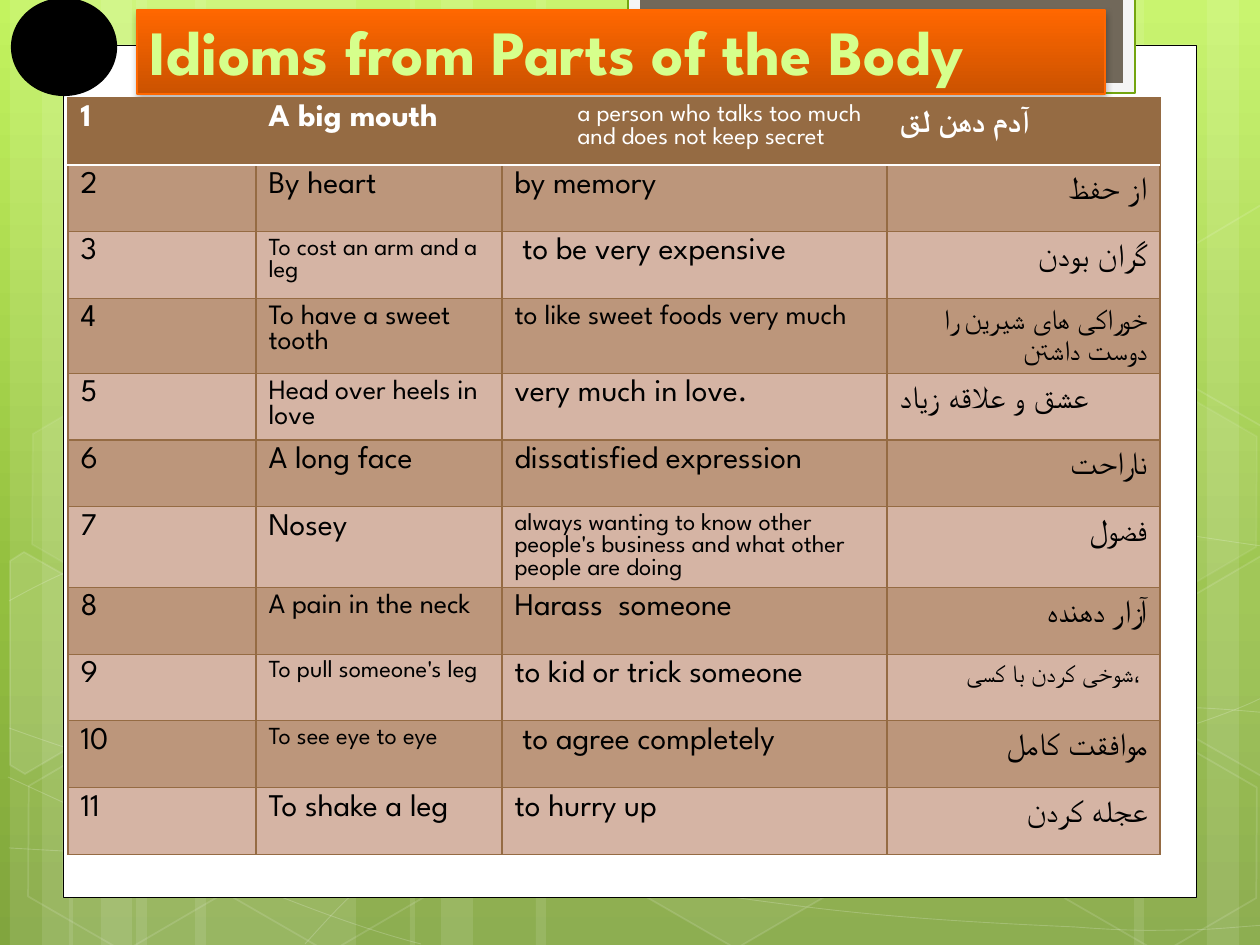
from dataclasses import dataclass

import pptx
import pptx.dml.color
import pptx.enum.shapes
import pptx.enum.text
import pptx.oxml
import pptx.oxml.ns
import pptx.util

PX = 914400 / 126  # EMU in one px
KIND = pptx.enum.shapes.MSO_SHAPE
ALIGN = pptx.enum.text.PP_ALIGN


@dataclass(frozen=True)
class Theme:
    font: str = "League Spartan"
    arabic: str = "Arial"
    white: str = "FFFFFF"
    black: str = "000000"
    brown: str = "956B43"
    bands: tuple = ("D5B4A4", "BC967B")
    title_text: str = "D6FF8C"
    title_line: str = "FF6700"
    title_fill: tuple = ((0, "FF6700"), (100, "CB5200"))
    backdrop: tuple = ((0, "C3F35F"), (62, "93BF3F"), (100, "81A53E"))
    frame: str = "F5F5F5"
    frame_line: str = "74A510"
    frame_inner: str = "71685A"
    title: int = 36
    normal: int = 18
    medium: int = 16
    small: int = 14


T = Theme()


@dataclass(frozen=True)
class Paint:
    fill: str | None = None
    line: str | None = None
    width: float = 1
    fill_alpha: int = 100
    line_alpha: int = 100


@dataclass(frozen=True)
class Cell:
    text: str
    size: int = T.normal
    align: ALIGN = ALIGN.LEFT
    font: str = T.font
    bold: bool = False
    indent: int = 0


def emu(px: float) -> int:
    return round(px * PX)


def rgb(code: str):
    return pptx.dml.color.RGBColor.from_string(code)


def xml(tag: str, attrs: str = "", inner: str = ""):
    ns = pptx.oxml.ns.nsdecls("a")
    return pptx.oxml.parse_xml(f"<a:{tag} {ns} {attrs}>{inner}</a:{tag}>")


def apply(shape, paint: Paint) -> None:
    """Give a shape its fill and line, without a shadow."""
    shape.shadow.inherit = False
    parts = ((shape.fill, paint.fill, paint.fill_alpha, "a:solidFill"),
             (shape.line.fill, paint.line, paint.line_alpha, "a:ln/a:solidFill"))
    for fill, code, alpha, where in parts:
        if code is None:
            fill.background()
            continue
        fill.solid()
        fill.fore_color.rgb = rgb(code)
        if alpha < 100:
            color = shape.element.spPr.xpath(where + "/a:srgbClr")[0]
            color.append(xml("alpha", f'val="{alpha * 1000}"'))
    if paint.line:
        shape.line.width = pptx.util.Pt(paint.width)


def gradient(fill, root, stops: tuple) -> None:
    """Vertical gradient through any number of stops."""
    fill.gradient()
    fill.gradient_angle = 270
    gs_list = root.xpath(".//a:gsLst")[0]
    for old in list(gs_list):
        gs_list.remove(old)
    for position, code in stops:
        gs_list.append(xml("gs", f'pos="{position * 1000}"', f'<a:srgbClr val="{code}"/>'))


def preset(s, kind, x: int, y: int, w: int, h: int, paint: Paint):
    sp = s.shapes.add_shape(kind, emu(x), emu(y), emu(w), emu(h))
    apply(sp, paint)
    return sp


def outline(s, points: list, paint: Paint, close: bool):
    builder = s.shapes.build_freeform(*points[0], scale=PX)
    builder.add_line_segments(points[1:], close=close)
    sp = builder.convert_to_shape()
    apply(sp, paint)
    return sp


def curve(s, start: tuple, bends: list, paint: Paint) -> None:
    """Chain of cubic curves: every three points become one bend."""
    points = [start] + [bend[i:i + 2] for bend in bends for i in (0, 2, 4)]
    trace = outline(s, points, paint, False).element.xpath(".//a:path")[0]
    segments = trace.xpath("a:lnTo")
    for i in range(0, len(segments), 3):
        cubic = xml("cubicBezTo")
        for segment in segments[i:i + 3]:
            cubic.append(segment[0])
            trace.remove(segment)
        trace.append(cubic)


def glass(fill_alpha: int, line_alpha: int) -> Paint:
    return Paint(T.white if fill_alpha else None, T.white, 1, fill_alpha, line_alpha)


STRIPES = [(136, 220), (10, 63), (42, 105), (195, 220), (69, 63), (101, 105),
           (924, 220), (1207, 63), (1134, 105), (536, 388), (410, 63), (441, 105)]
CURVES = [
    ((9, 848), [(77, 852, 145, 856, 239, 854), (334, 853, 451, 851, 577, 838),
                (703, 825, 882, 801, 998, 777), (1113, 753, 1231, 716, 1269, 694)]),
    ((9, 601), [(45, 581, 82, 562, 152, 543), (224, 524, 326, 496, 437, 488),
                (549, 479, 685, 478, 824, 488), (963, 498, 1193, 537, 1269, 547)]),
    ((8, 777), [(160, 847, 311, 916, 421, 944)]),
    ((9, 728), [(48, 742, 88, 756, 161, 776), (234, 795, 344, 827, 450, 848),
                (554, 869, 687, 892, 791, 905), (896, 919, 1008, 924, 1075, 927),
                (1140, 932, 1158, 930, 1191, 930), (1223, 929, 1246, 926, 1269, 925)]),
    ((305, 944), [(328, 919, 350, 893, 381, 871), (411, 848, 454, 823, 489, 805),
                  (524, 788, 546, 780, 592, 767), (638, 754, 722, 737, 766, 728),
                  (811, 719, 818, 719, 857, 717), (896, 713, 958, 709, 1000, 708),
                  (1045, 707, 1116, 708, 1201, 708), (1223, 709, 1245, 711, 1268, 713)]),
]
# Left, top, fill opacity, line opacity
HEXAGONS = [(421, 45, 4, 8), (626, 742, 6, 12), (14, 745, 0, 12), (18, 393, 7, 8),
            (219, 746, 0, 12), (949, 571, 10, 12), (1051, 747, 0, 12), (1051, 396, 7, 8)]
CUT_HEXAGONS = [
    ([(10, 561), (24, 552), (121, 607), (120, 718), (25, 774), (10, 765)], 10),
    ([(1167, 611), (1261, 556), (1271, 562), (1271, 772), (1263, 777), (1167, 722)], 4),
    ([(1167, 261), (1261, 205), (1273, 212), (1271, 422), (1263, 427), (1167, 372)], 0),
]


def small(text: str) -> Cell:
    return Cell(text, T.small)


def medium(text: str) -> Cell:
    return Cell(text, T.medium)


def right(text: str, size: int = T.normal, font: str = T.font) -> Cell:
    return Cell(text, size, ALIGN.RIGHT, font)


# Idiom, meaning, Persian equivalent; the number is counted
IDIOMS = [
    (Cell("A big mouth", bold=True),
     Cell("a person who talks too much and does not keep secret", T.small, indent=63),
     Cell("آدم دهن لق", bold=True)),
    (Cell("By heart"), Cell("by memory"), right("از حفظ")),
    (small("To cost an arm and a leg"), Cell(" to be very expensive"), right("گران بودن")),
    (medium("To have a sweet tooth"), medium("to like sweet foods very much"),
     right("خوراکی های شیرین را دوست داشتن", T.medium, T.arabic)),
    (medium("Head over heels in love"), Cell("very much in love."), Cell("عشق و علاقه زیاد")),
    (Cell("A long face"), Cell("dissatisfied expression"), right("ناراحت")),
    (Cell("Nosey"),
     small("always wanting to know other people's business and what other people are doing"),
     right("فضول")),
    (medium("A pain in the neck"), Cell("Harass  someone"), right("آزار دهنده")),
    (small("To pull someone's leg"), Cell("to kid or trick someone"),
     right("شوخی کردن با کسی، ", T.small)),
    (small("To see eye to eye"), Cell(" to agree completely"), right("موافقت کامل")),
    (Cell("To shake a leg"), Cell("to hurry up"), right("عجله کردن")),
]
COLUMNS, TABLE_HEIGHT = (188, 246, 385, 273), 735


def write(p, cell: Cell, color: str) -> None:
    p.text, p.alignment = cell.text, cell.align
    if cell.indent:
        p.level = 1
        p._p.get_or_add_pPr().set("marL", str(emu(cell.indent)))
    f = p.font
    f.name, f.size, f.bold = cell.font, pptx.util.Pt(cell.size), cell.bold
    f.color.rgb = rgb(color)
    latin = p._p.xpath("a:pPr/a:defRPr/a:latin")[0]
    latin.addnext(xml("cs", f'typeface="{T.arabic}"'))


def borders(cell, row: int) -> None:
    """Brown grid, with a white rule under the first row."""
    tc_pr = cell._tc.get_or_add_tcPr()
    for i, side in enumerate(("lnL", "lnR", "lnT", "lnB")):
        rule = (row, side) in ((0, "lnB"), (1, "lnT"))
        code, width = (T.white, 1.25) if rule else (T.brown, 0.75)
        tc_pr.insert(i, xml(side, f'w="{round(width * 12700)}"',
                            f'<a:solidFill><a:srgbClr val="{code}"/></a:solidFill>'))


def idiom_table(s, x: int, y: int) -> None:
    table = s.shapes.add_table(len(IDIOMS), len(COLUMNS), emu(x), emu(y),
                               emu(sum(COLUMNS)), emu(TABLE_HEIGHT)).table
    for column, width in zip(table.columns, COLUMNS):
        column.width = emu(width)
    for i, idiom in enumerate(IDIOMS):
        for j, content in enumerate((Cell(str(i + 1), bold=i == 0), *idiom)):
            cell = table.cell(i, j)
            cell.fill.solid()
            cell.fill.fore_color.rgb = rgb(T.bands[i % 2] if i else T.brown)
            borders(cell, i)
            write(cell.text_frame.paragraphs[0], content, T.black if i else T.white)


def title_bar(s) -> None:
    sp = s.shapes.title
    s.shapes.element.append(sp.element)  # in front of the backdrop
    sp.left, sp.top, sp.width, sp.height = (emu(v) for v in (137, 10, 968, 84))
    apply(sp, Paint(T.title_line, T.title_line, 0.75))
    gradient(sp.fill, sp.element, T.title_fill)
    sp.element.spPr.xpath("a:effectLst")[0].append(
        xml("outerShdw", 'blurRad="50800" dist="25400" dir="5400000"',
            f'<a:srgbClr val="{T.black}"><a:alpha val="28000"/></a:srgbClr>'))
    tf = sp.text_frame
    tf.auto_size = pptx.enum.text.MSO_AUTO_SIZE.NONE
    tf.vertical_anchor = pptx.enum.text.MSO_ANCHOR.BOTTOM
    write(tf.paragraphs[0], Cell("Idioms from Parts of the Body", T.title, bold=True), T.title_text)


def main() -> None:
    prs = pptx.Presentation()
    prs.slide_width, prs.slide_height = emu(1260), emu(945)
    s = prs.slides.add_slide(prs.slide_layouts[5])

    # Backdrop: gradient, stripes, curves and hexagons
    gradient(s.background.fill, s.element, T.backdrop)
    for x, w in STRIPES:
        preset(s, KIND.RECTANGLE, x, 0, w, 945, Paint(T.white, fill_alpha=10))
    for start, bends in CURVES:
        curve(s, start, bends, Paint(None, T.white, 0.5, line_alpha=20))
    for x, y, fill_alpha, line_alpha in HEXAGONS:
        sp = preset(s, KIND.HEXAGON, x, y, 220, 192, glass(fill_alpha, line_alpha))
        sp.adjustments[0] = 0.285
        sp.rotation = 30
    for points, fill_alpha in CUT_HEXAGONS:
        outline(s, points, glass(fill_alpha, 12), True)

    # White page and the tab at its top
    preset(s, KIND.RECTANGLE, 63, 45, 1134, 853, Paint(T.white, T.black, 0.5))
    preset(s, KIND.RECTANGLE, 628, -3, 507, 96, Paint(T.frame, T.frame_line, 1.25))
    preset(s, KIND.RECTANGLE, 640, -3, 483, 86, Paint(T.frame_inner))

    # Title, table and the dot in the corner
    title_bar(s)
    idiom_table(s, 68, 98)
    preset(s, KIND.OVAL, 12, -1, 104, 96, Paint(T.black, T.black, 1.25))
    prs.save("out.pptx")


if __name__ == "__main__":
    main()
